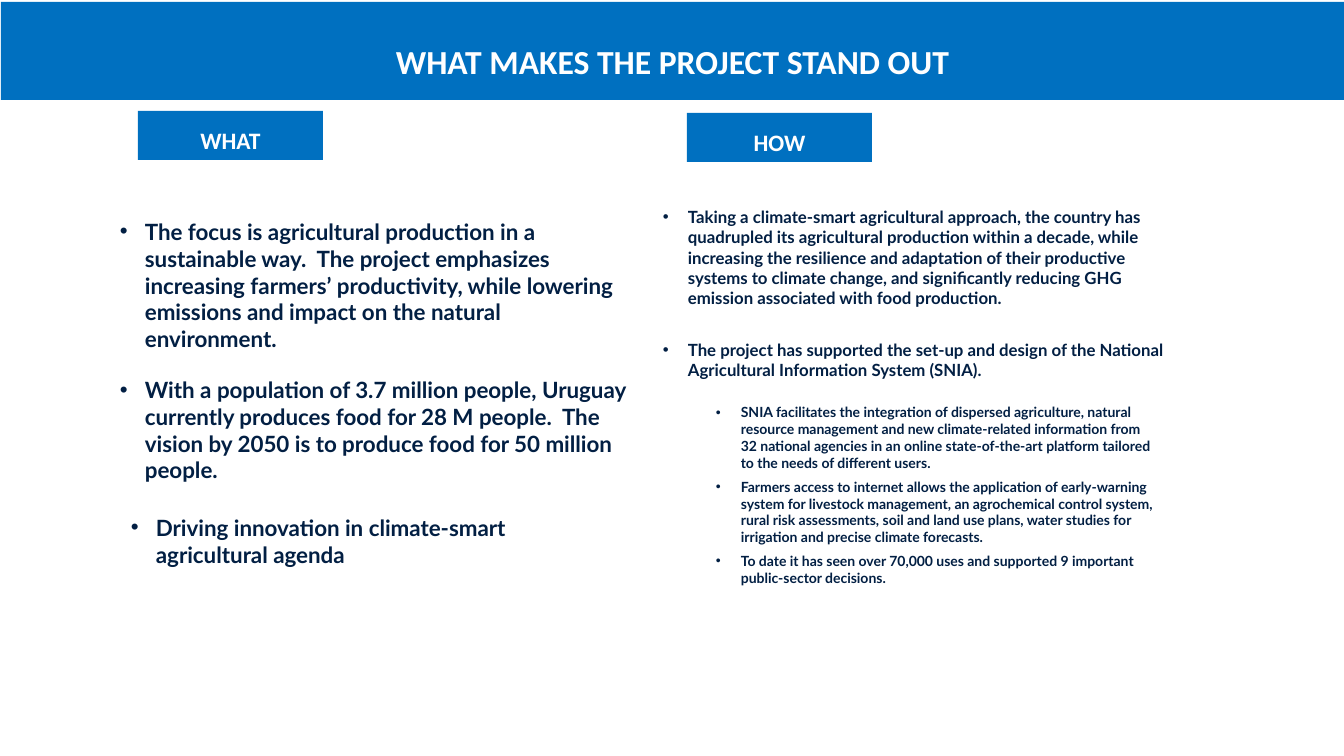
from lxml.etree import SubElement
from pptx import Presentation
from pptx.dml.color import RGBColor
from pptx.enum.shapes import MSO_SHAPE as Shape
from pptx.enum.text import MSO_ANCHOR as Anchor, PP_ALIGN as Align
from pptx.oxml.ns import qn
from pptx.util import Pt

EMU_PER_PX = 914400 / 100.8
BLUE = RGBColor(0x00, 0x70, 0xC0)
NAVY = RGBColor(0x02, 0x1F, 0x43)
WHITE = RGBColor(0xFF, 0xFF, 0xFF)

FOCUS = [
    "The focus is agricultural production in a sustainable way.  The project emphasizes "
    "increasing farmers’ productivity, while lowering emissions and impact on the natural "
    "environment.",
    "With a population of 3.7 million people, Uruguay currently produces food for 28 M people.  "
    "The vision by 2050 is to produce food for 50 million people.",
]
INNOVATION = ["Driving innovation in climate-smart agricultural agenda"]
APPROACH = [
    "Taking a climate-smart agricultural approach, the country has quadrupled its agricultural "
    "production within a decade, while increasing the resilience and adaptation of their "
    "productive systems to climate change, and significantly reducing GHG emission associated "
    "with food production.",
]
SYSTEM = [
    "The project has supported the set-up and design of the National Agricultural Information "
    "System (SNIA).",
]
SYSTEM_DETAILS = [
    "SNIA facilitates the integration of dispersed agriculture, natural resource management and "
    "new climate-related information from 32 national agencies in an online state-of-the-art "
    "platform tailored to the needs of different users.",
    "Farmers access to internet allows the application of early-warning system for livestock "
    "management, an agrochemical control system, rural risk assessments, soil and land use "
    "plans, water studies for irrigation and precise climate forecasts.",
    "To date it has seen over 70,000 uses and supported 9 important public-sector decisions.",
]


def px(length):
    return round(length * EMU_PER_PX)


def style_runs(paragraph, font_name, size, color):
    for run in paragraph.runs:
        run.font.name = font_name
        run.font.size = Pt(size)
        run.font.bold = True
        run.font.color.rgb = color


def add_banner(slide, box, text, size, line_spacing):
    shape = slide.shapes.add_shape(Shape.RECTANGLE, *map(px, box))
    shape.shadow.inherit = False
    shape.fill.solid()
    shape.fill.fore_color.rgb = BLUE
    shape.line.fill.background()
    frame = shape.text_frame
    frame.word_wrap = True
    frame.vertical_anchor = Anchor.MIDDLE
    frame.margin_left = frame.margin_right = px(13)
    frame.margin_top = frame.margin_bottom = px(7)
    frame.text = text
    paragraph = frame.paragraphs[0]
    paragraph.alignment = Align.CENTER
    paragraph.line_spacing = line_spacing
    style_runs(paragraph, "Calibri", size, WHITE)


def add_bullet(paragraph):
    properties = paragraph._p.get_or_add_pPr()
    properties.set("marL", str(px(76)))
    properties.set("indent", str(-px(25)))
    SubElement(properties, qn("a:buFont")).set("typeface", "Arial")
    SubElement(properties, qn("a:buChar")).set("char", "•")


def add_bullet_list(slide, box, texts, size, before, after):
    frame = slide.shapes.add_textbox(*map(px, box)).text_frame
    frame.word_wrap = True
    frame.text = "\n".join(texts)
    for paragraph in frame.paragraphs:
        paragraph.level = 1
        paragraph.space_before = Pt(before)
        paragraph.space_after = Pt(after)
        add_bullet(paragraph)
        style_runs(paragraph, "Lato", size, NAVY)


def main():
    presentation = Presentation()
    presentation.slide_width = px(1344)
    presentation.slide_height = px(756)
    slide = presentation.slides.add_slide(presentation.slide_layouts[6])

    add_banner(slide, (138, 111, 185, 49), "WHAT", 16.8, 1.3)
    add_banner(slide, (687, 113, 185, 49), "HOW", 16.8, 1.3)
    add_bullet_list(slide, (602, 202, 597, 59), APPROACH, 12, 0, 5)
    add_bullet_list(slide, (602, 335, 597, 59), SYSTEM, 12, 0, 5)
    add_bullet_list(slide, (70, 509, 556, 42), INNOVATION, 16, 5, 12)
    add_bullet_list(slide, (655, 399, 512, 59), SYSTEM_DETAILS, 10, 0, 5)
    add_bullet_list(slide, (59, 213, 579, 42), FOCUS, 16, 5, 12)
    add_banner(slide, (1, 2, 1343, 98), "WHAT MAKES THE PROJECT STAND OUT", 24, 1.5)

    presentation.save("out.pptx")


if __name__ == "__main__":
    main()
